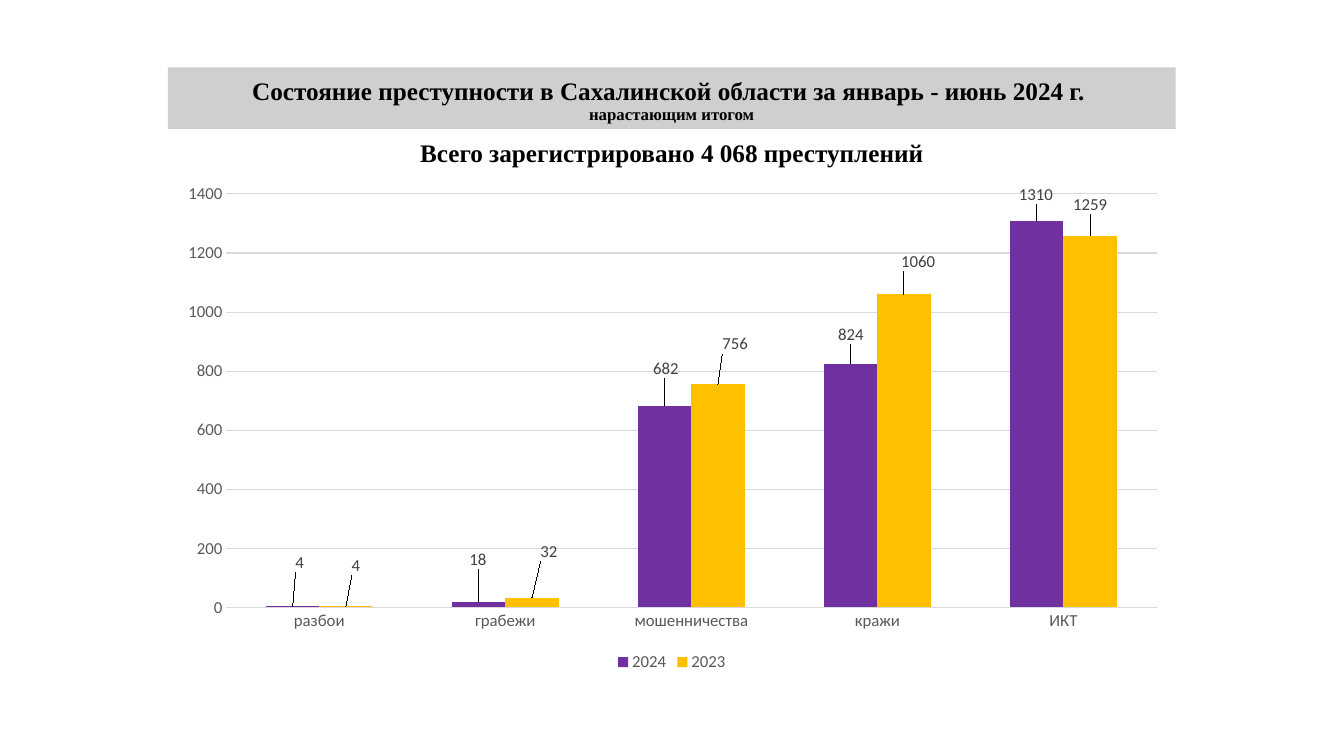
from lxml import etree
from pptx import Presentation
from pptx.chart.data import CategoryChartData
from pptx.dml.color import RGBColor
from pptx.enum import chart as ch, shapes, text
from pptx.oxml.ns import qn
from pptx.util import Cm, Pt

LEFT, WIDTH = Cm(4.23), Cm(25.4)
HEADING_FONT, CHART_FONT = "Times New Roman", "Calibri"
CRIMES = ["разбои", "грабежи", "мошенничества", "кражи", "ИКТ"]
# year, colour, counts, label shifts as percent of chart width and height
YEARS = [
    ("2024", "7030A0", [4, 18, 682, 824, 1310],
     [(0.7, -5.8), (-0.1, -5.6), (0.1, -4.6), (0, -3), (-0.1, -2.4)]),
    ("2023", "FFC000", [4, 32, 756, 1060, 1259],
     [(1, -5.2), (1.7, -6.4), (1.7, -5.2), (1.4, -3.8), (0, -3.4)]),
]


def rgb(value):
    return RGBColor.from_string(value)


def set_attributes(target, values):
    for name, value in values.items():
        setattr(target, name, value)


def set_font(font, name, size, color, bold=False):
    set_attributes(font, {"name": name, "size": Pt(size), "bold": bold})
    font.color.rgb = rgb(color)


def write_heading(shape, lines, anchor, spacing):
    """Fill a shape with one centred paragraph of (words, size) lines."""
    frame = shape.text_frame
    set_attributes(frame, {"word_wrap": True, "vertical_anchor": anchor})
    paragraph = frame.paragraphs[0]
    set_attributes(paragraph, {"alignment": text.PP_ALIGN.CENTER, **spacing})
    for index, (words, size) in enumerate(lines):
        if index:
            paragraph.add_line_break()
        run = paragraph.add_run()
        run.text = words
        set_font(run.font, HEADING_FONT, size, "000000", True)


def add_title_band(slide):
    band = slide.shapes.add_shape(
        shapes.MSO_SHAPE.RECTANGLE, LEFT, Cm(1.7), WIDTH, Cm(1.55))
    band.shadow.inherit = False
    band.fill.solid()
    band.fill.fore_color.rgb = rgb("D0CECE")
    band.line.fill.background()
    write_heading(
        band,
        [("Состояние преступности в Сахалинской области за январь - июнь 2024 г. ", 18),
         ("нарастающим итогом", 12)],
        text.MSO_ANCHOR.BOTTOM, {"line_spacing": 0.9})


def add_total(slide):
    total = slide.shapes.add_textbox(LEFT, Cm(3.48), WIDTH, Cm(0.91))
    write_heading(total, [("Всего зарегистрировано 4 068 преступлений", 18)],
                  text.MSO_ANCHOR.TOP,
                  {"line_spacing": 0.8, "space_before": Pt(10)})


def set_layout(parent, position, **values):
    """Give a chart part a manual layout, placed as the given child."""
    for old in parent.findall(qn("c:layout")):
        parent.remove(old)
    layout = etree.Element(qn("c:layout"))
    manual = etree.SubElement(layout, qn("c:manualLayout"))
    for name, value in values.items():
        etree.SubElement(manual, qn(f"c:{name}")).set("val", str(value))
    parent.insert(position, layout)


def style_axis(axis):
    set_attributes(axis, {"major_tick_mark": ch.XL_TICK_MARK.NONE,
                          "minor_tick_mark": ch.XL_TICK_MARK.NONE})
    axis.format.line.fill.background()
    set_font(axis.tick_labels.font, CHART_FONT, 12, "595959")


def style_series(series, color, shifts):
    series.format.fill.solid()
    series.format.fill.fore_color.rgb = rgb(color)
    series.invert_if_negative = False
    labels = series.data_labels
    set_attributes(labels, {"show_value": True,
                            "position": ch.XL_LABEL_POSITION.OUTSIDE_END})
    set_font(labels.font, CHART_FONT, 12, "404040")
    for index, (across, down) in enumerate(shifts):
        label = series.points[index].data_label
        set_font(label.font, CHART_FONT, 12, "404040")
        label.position = ch.XL_LABEL_POSITION.OUTSIDE_END
        element = labels._element.findall(qn("c:dLbl"))[index]
        set_layout(element, 1, x=round(across / 100, 3), y=round(down / 100, 3))


def add_crime_chart(slide):
    data = CategoryChartData()
    data.categories = CRIMES
    for year, _, counts, _ in YEARS:
        data.add_series(year, counts)
    chart = slide.shapes.add_chart(
        ch.XL_CHART_TYPE.COLUMN_CLUSTERED, LEFT, Cm(4.37), WIDTH, Cm(12.67), data).chart
    set_font(chart.font, CHART_FONT, 10, "000000")
    set_attributes(chart, {"has_title": False, "has_legend": True})
    set_attributes(chart.legend, {"position": ch.XL_LEGEND_POSITION.BOTTOM,
                                  "include_in_layout": False})
    set_font(chart.legend.font, CHART_FONT, 12, "595959")
    plot = chart.plots[0]
    set_attributes(plot, {"gap_width": 150, "overlap": 0, "vary_by_categories": False})
    for series, (_, color, _, shifts) in zip(plot.series, YEARS):
        style_series(series, color, shifts)
    for axis in (chart.category_axis, chart.value_axis):
        style_axis(axis)
    set_attributes(chart.value_axis, {"minimum_scale": 0, "maximum_scale": 1400,
                                      "major_unit": 200, "has_major_gridlines": True})
    grid = chart.value_axis.major_gridlines.format.line
    grid.color.rgb = rgb("D9D9D9")
    grid.width = Pt(0.75)
    set_layout(chart._chartSpace.chart.plotArea, 0, layoutTarget="inner",
               xMode="edge", yMode="edge", x=0.058, y=0.041, w=0.923, h=0.822)


def main():
    deck = Presentation()
    set_attributes(deck, {"slide_width": Cm(33.87), "slide_height": Cm(19.05)})
    slide = deck.slides.add_slide(deck.slide_layouts[6])
    add_title_band(slide)
    add_total(slide)
    add_crime_chart(slide)
    deck.save("out.pptx")


if __name__ == "__main__":
    main()
